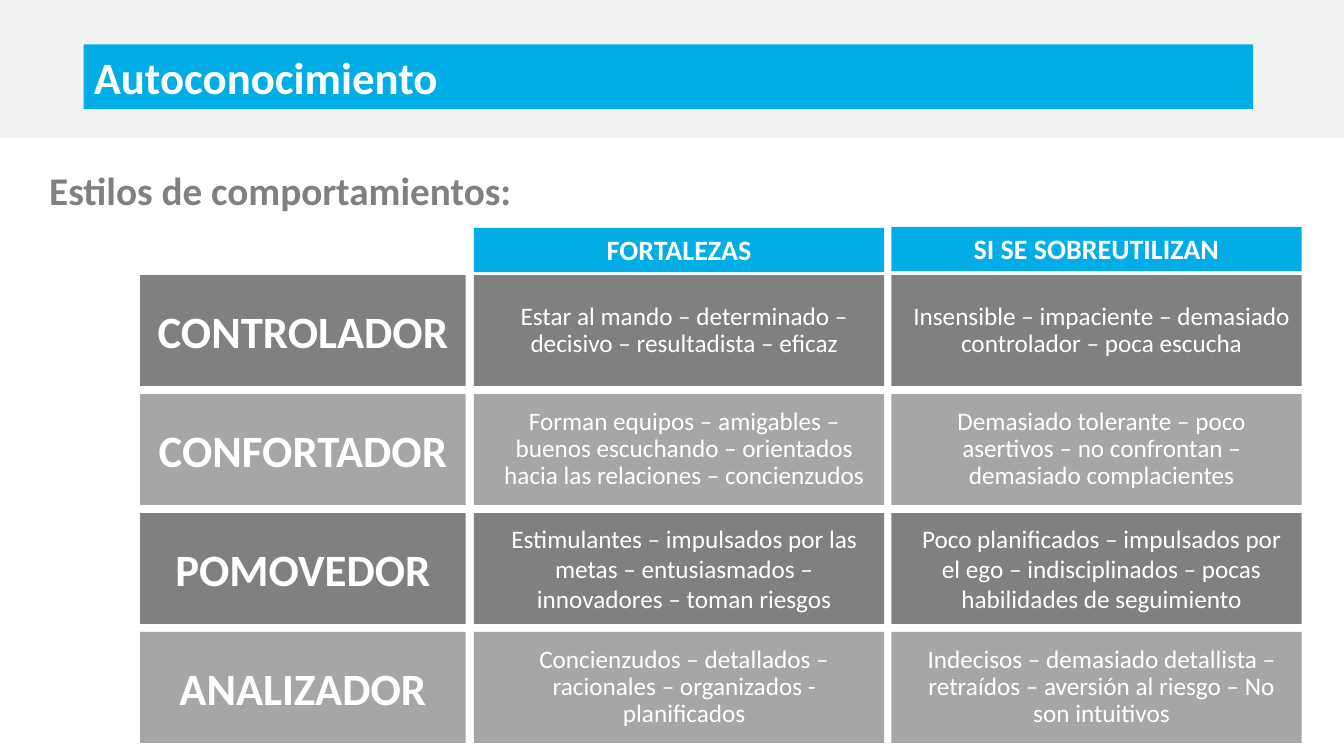
import pptx
import pptx.util
import pptx.dml.color
import pptx.enum.shapes
import pptx.enum.text

Inches = pptx.util.Inches
RGBColor = pptx.dml.color.RGBColor
ALIGN = pptx.enum.text.PP_ALIGN
ANCHOR = pptx.enum.text.MSO_ANCHOR

BLUE = RGBColor(0x00, 0xAD, 0xE6)
DARK_GRAY = RGBColor(0x80, 0x80, 0x80)
LIGHT_GRAY = RGBColor(0xA6, 0xA6, 0xA6)
PALE_GRAY = RGBColor(0xF1, 0xF3, 0xF2)
WHITE = RGBColor(0xFF, 0xFF, 0xFF)

STYLES = [
    ("CONTROLADOR",
     "Estar al mando – determinado – decisivo – resultadista – eficaz",
     "Insensible – impaciente – demasiado controlador – poca escucha", 0.9),
    ("CONFORTADOR",
     "Forman equipos – amigables – buenos escuchando – orientados hacia las relaciones – concienzudos",
     "Demasiado tolerante – poco asertivos – no confrontan – demasiado complacientes", 0.9),
    ("POMOVEDOR",
     "Estimulantes – impulsados por las metas – entusiasmados – innovadores – toman riesgos",
     "Poco planificados – impulsados por el ego – indisciplinados – pocas habilidades de seguimiento", 1.0),
    ("ANALIZADOR",
     "Concienzudos – detallados – racionales – organizados - planificados",
     "Indecisos – demasiado detallista – retraídos – aversión al riesgo – No son intuitivos", 0.9),
]

# Grid of the comparison, in inches
LABEL_LEFT, LABEL_WIDTH = 1.39, 3.23
COLUMN_LEFTS, COLUMN_WIDTH = (4.7, 8.84), 4.07
HEADINGS = (("FORTALEZAS", 2.26), ("SI SE SOBREUTILIZAN", 2.25))
FIRST_ROW, ROW_GAP, ROW_HEIGHT = 2.73, 0.08, 1.1
ROW_STEP = ROW_HEIGHT + ROW_GAP


class SlideBuilder:
    """Holds the text style and the current slide."""

    font_name = "Calibri"

    def __init__(self, slide):
        self.slide = slide

    def set_text(self, shape, text, size, color=WHITE, bold=False, align=ALIGN.CENTER,
                 anchor=ANCHOR.MIDDLE, spacing=1.0, left_inset=0.1):
        frame = shape.text_frame
        frame.text = text
        frame.word_wrap = True
        frame.auto_size = pptx.enum.text.MSO_AUTO_SIZE.NONE
        frame.vertical_anchor = anchor
        frame.margin_left = Inches(left_inset)
        paragraph = frame.paragraphs[0]
        paragraph.alignment = align
        paragraph.line_spacing = spacing
        font = paragraph.runs[0].font
        font.name, font.size, font.bold = self.font_name, pptx.util.Pt(size), bold
        font.color.rgb = color

    def box(self, left, top, width, height, fill):
        shape = self.slide.shapes.add_shape(
            pptx.enum.shapes.MSO_SHAPE.RECTANGLE,
            Inches(left), Inches(top), Inches(width), Inches(height))
        shape.shadow.inherit = False
        shape.fill.solid()
        shape.fill.fore_color.rgb = fill
        shape.line.fill.background()
        return shape

    def header_band(self, width, height):
        band = self.box(0, 0, width, height, PALE_GRAY)
        band.line.color.rgb = PALE_GRAY
        band.line.width = pptx.util.Pt(1)
        # Send the band behind the title
        self.slide.shapes.title.element.addprevious(band.element)

    def title(self, text, left, top, width, height):
        title = self.slide.shapes.title
        title.left, title.top = Inches(left), Inches(top)
        title.width, title.height = Inches(width), Inches(height)
        title.fill.solid()
        title.fill.fore_color.rgb = BLUE
        self.set_text(title, text, 32, bold=True, align=ALIGN.JUSTIFY, anchor=ANCHOR.TOP)

    def subtitle(self, text, left, top, width, height):
        shape = self.slide.shapes.add_textbox(
            Inches(left), Inches(top), Inches(width), Inches(height))
        self.set_text(shape, text, 28, DARK_GRAY, bold=True, align=ALIGN.LEFT,
                      spacing=pptx.util.Pt(32))

    def heading(self, text, left, top):
        shape = self.box(left, top, COLUMN_WIDTH, 0.44, BLUE)
        self.set_text(shape, text, 20, bold=True, anchor=ANCHOR.TOP)

    def label(self, text, top, fill):
        shape = self.box(LABEL_LEFT, top, LABEL_WIDTH, ROW_HEIGHT, fill)
        self.set_text(shape, text, 32, bold=True)

    def traits(self, text, left, top, fill, spacing):
        shape = self.box(left, top, COLUMN_WIDTH, ROW_HEIGHT, fill)
        self.set_text(shape, text, 18, spacing=spacing, left_inset=0.2)


def main():
    presentation = pptx.Presentation()
    presentation.slide_width = Inches(13.33)
    presentation.slide_height = Inches(7.5)
    slide = presentation.slides.add_slide(presentation.slide_layouts.get_by_name("Title Only"))
    builder = SlideBuilder(slide)

    # Header
    builder.header_band(13.33, 1.36)
    builder.title("Autoconocimiento", 0.83, 0.44, 11.6, 0.64)
    builder.subtitle("Estilos de comportamientos:", 0.39, 1.51, 12.47, 0.76)

    # Column headings
    for left, (text, top) in zip(COLUMN_LEFTS, HEADINGS):
        builder.heading(text, left, top)

    # One row per behaviour style, in alternating grays
    for row, (name, strengths, excesses, spacing) in enumerate(STYLES):
        top = FIRST_ROW + row * ROW_STEP
        fill = LIGHT_GRAY if row % 2 else DARK_GRAY
        builder.label(name, top, fill)
        for left, text in zip(COLUMN_LEFTS, (strengths, excesses)):
            builder.traits(text, left, top, fill, spacing)

    presentation.save("out.pptx")


if __name__ == "__main__":
    main()
